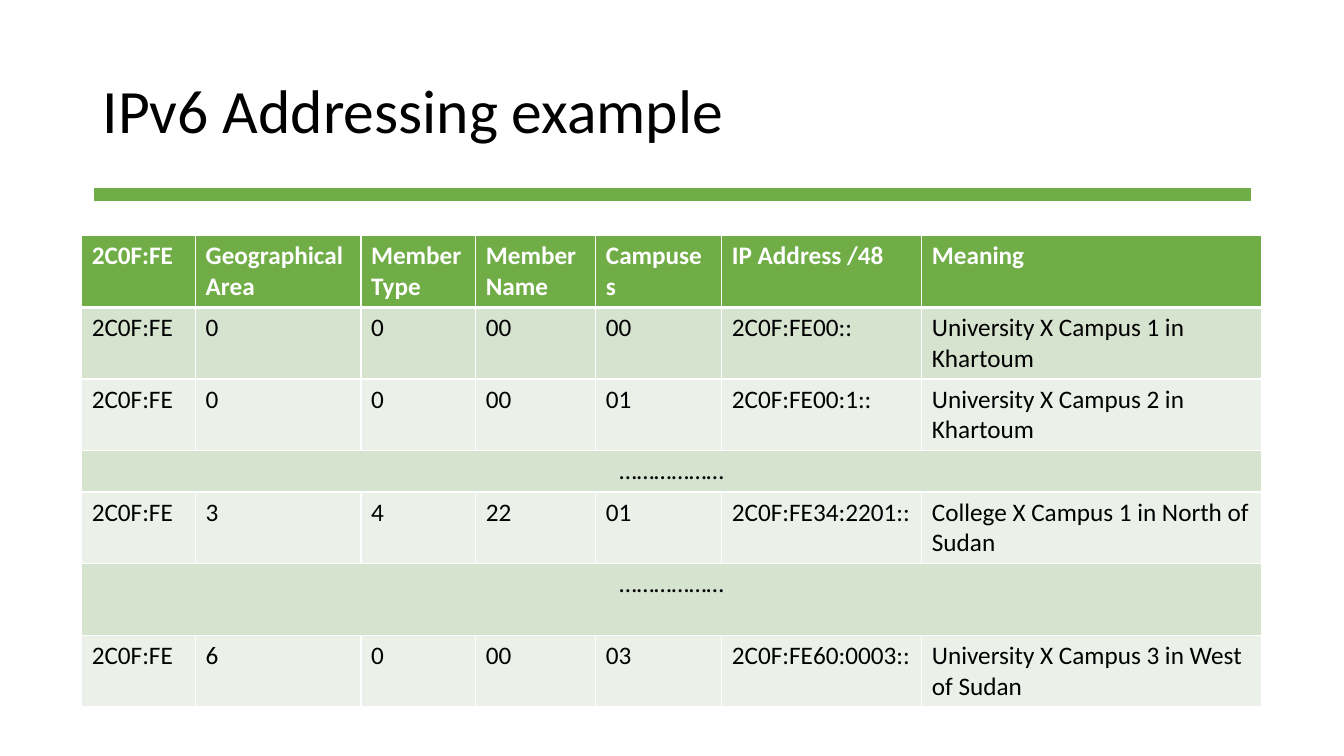
from lxml import etree
from pptx import Presentation
from pptx.dml.color import RGBColor
from pptx.enum.shapes import MSO_SHAPE
from pptx.enum.text import MSO_ANCHOR, PP_ALIGN
from pptx.oxml.ns import qn
from pptx.util import Inches, Pt

RECTANGLE = MSO_SHAPE.RECTANGLE
MIDDLE = MSO_ANCHOR.MIDDLE
LEFT, CENTER = PP_ALIGN.LEFT, PP_ALIGN.CENTER

WIDTH, HEIGHT = Inches(13.333), Inches(7.5)
COLORS = {"green": "70AD47", "white": "FFFFFF", "black": "000000",
          "band_dark": "D5E3CF", "band_light": "EBF1E9"}
FONT = "Calibri"
TITLE_FORMAT = {"size": Pt(44), "bold": False}
HEADER_FORMAT = {"size": Pt(18), "bold": True}
BODY_FORMAT = {"size": Pt(18), "bold": False}

# Percent of the slide's width and height
TITLE_BOX = (6.9, 5.33, 86.25, 19.33)
RULE_BOX = (6.9, 24.67, 86.25, 2)
TABLE_CORNER = (6.08, 31.2)
COLUMN_WIDTHS = [8.48, 12.3, 8.55, 8.93, 9.38, 14.88, 25.28]
TALL_ROW, SHORT_ROW = 9.47, 5.47

PREFIX = "2C0F:FE"
DOTS = ["………………"]
ROWS = [
    [PREFIX, "Geographical Area", "Member Type", "Member Name", "Campuses",
     "IP Address /48", "Meaning"],
    [PREFIX, "0", "0", "00", "00", "2C0F:FE00::",
     "University X Campus 1 in Khartoum"],
    [PREFIX, "0", "0", "00", "01", "2C0F:FE00:1::",
     "University X Campus 2 in Khartoum"],
    DOTS,
    [PREFIX, "3", "4", "22", "01", "2C0F:FE34:2201::",
     "College X Campus 1 in North of Sudan"],
    DOTS,
    [PREFIX, "6", "0", "00", "03", "2C0F:FE60:0003::",
     "University X Campus 3 in West of Sudan"],
]
ROW_HEIGHTS = [TALL_ROW] * 3 + [SHORT_ROW] + [TALL_ROW] * 3


def across(percent):
    return int(WIDTH * percent / 100)


def down(percent):
    return int(HEIGHT * percent / 100)


def place(box):
    left, top, width, height = box
    return across(left), down(top), across(width), down(height)


def rgb(name):
    return RGBColor.from_string(COLORS[name])


def write(tf, text, color, font_format, align=LEFT):
    p = tf.paragraphs[0]
    p.alignment = align
    r = p.add_run()
    r.text = text
    r.font.name = FONT
    r.font.color.rgb = rgb(color)
    for key, value in font_format.items():
        setattr(r.font, key, value)
    return p


def add_title(slide, text):
    tf = slide.shapes.add_textbox(*place(TITLE_BOX)).text_frame
    tf.word_wrap = True
    tf.vertical_anchor = MIDDLE
    write(tf, text, "black", TITLE_FORMAT).line_spacing = 0.9


def add_rule(slide):
    sp = slide.shapes.add_shape(RECTANGLE, *place(RULE_BOX))
    sp.shadow.inherit = False
    sp.fill.solid()
    sp.fill.fore_color.rgb = rgb("green")
    sp.line.color.rgb = rgb("white")
    sp.line.width = Pt(1.5)


def set_borders(cell, widths):
    tc_pr = cell._tc.get_or_add_tcPr()
    for side, points in widths.items():
        ln = etree.SubElement(tc_pr, qn(f"a:ln{side}"), w=str(Pt(points)))
        fill = etree.SubElement(ln, qn("a:solidFill"))
        etree.SubElement(fill, qn("a:srgbClr"), val=COLORS["white"])


def style_cell(cell, row):
    # Header is green; body rows alternate dark and light
    fill = "green" if row == 0 else "band_dark" if row % 2 else "band_light"
    set_borders(cell, {"L": 1, "R": 1, "T": 3 if row == 1 else 1,
                       "B": 3 if row == 0 else 1})
    cell.fill.solid()
    cell.fill.fore_color.rgb = rgb(fill)


def add_address_table(slide):
    left, top, width, height = place(
        (*TABLE_CORNER, sum(COLUMN_WIDTHS), sum(ROW_HEIGHTS)))
    table = slide.shapes.add_table(
        len(ROWS), len(COLUMN_WIDTHS), left, top, width, height).table
    for column, share in zip(table.columns, COLUMN_WIDTHS):
        column.width = across(share)
    for row, share in zip(table.rows, ROW_HEIGHTS):
        row.height = down(share)

    for i, texts in enumerate(ROWS):
        cells = list(table.rows[i].cells)
        for cell in cells:
            style_cell(cell, i)
        if texts is DOTS:
            cells[0].merge(cells[-1])
        color, font_format = (("black", BODY_FORMAT) if i
                              else ("white", HEADER_FORMAT))
        align = CENTER if texts is DOTS else LEFT
        for cell, text in zip(cells, texts):
            write(cell.text_frame, text, color, font_format, align)


def main():
    prs = Presentation()
    prs.slide_width, prs.slide_height = WIDTH, HEIGHT
    slide = prs.slides.add_slide(prs.slide_layouts[6])
    add_rule(slide)
    add_title(slide, "IPv6 Addressing example")
    add_address_table(slide)
    prs.save("out.pptx")


if __name__ == "__main__":
    main()
